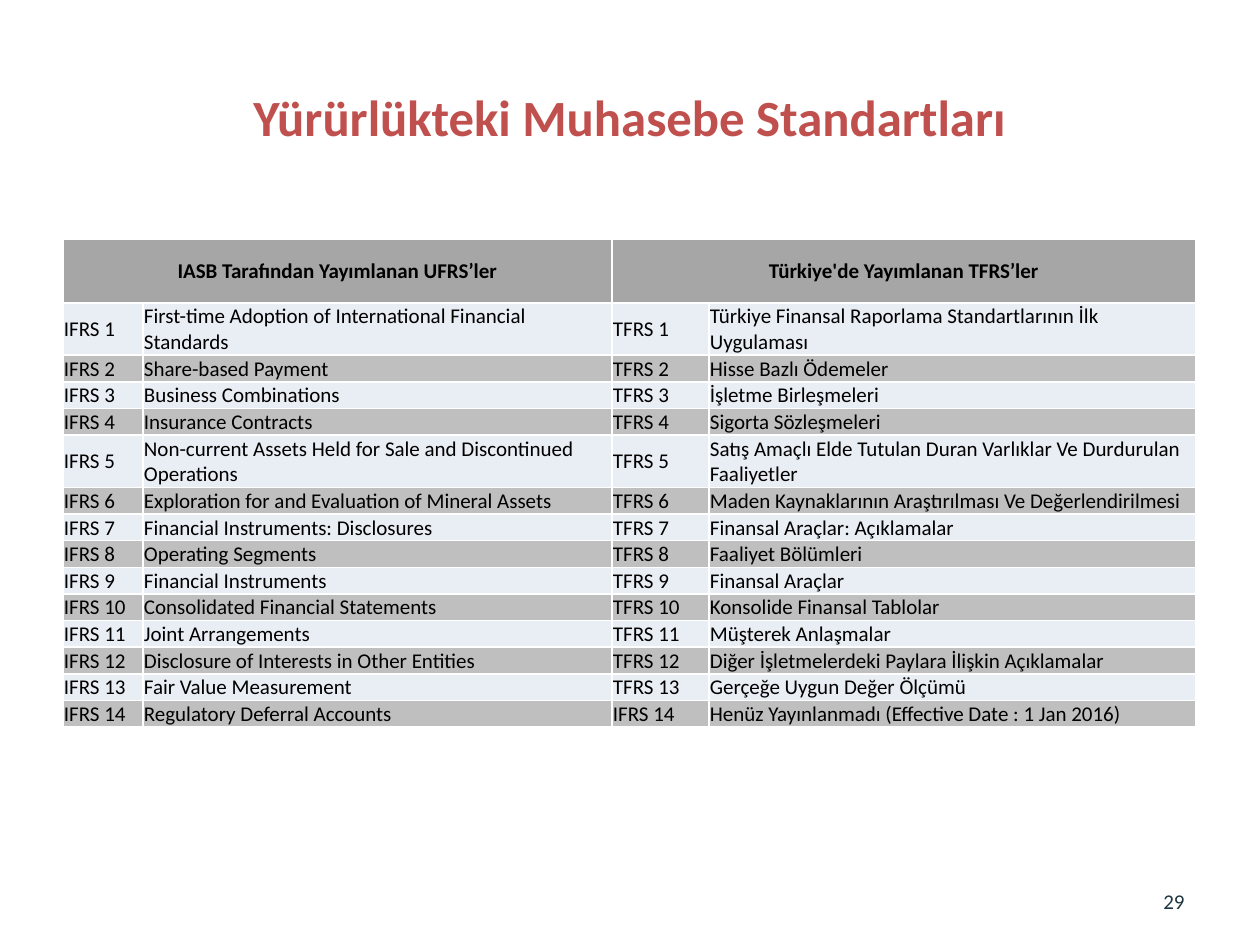
import pptx
import pptx.dml.color
import pptx.enum.text
import pptx.oxml
import pptx.oxml.ns
import pptx.util

PX = 914400 // 126  # EMU per px
ALIGN = pptx.enum.text.PP_ALIGN
MIDDLE = pptx.enum.text.MSO_ANCHOR.MIDDLE

HEADINGS = ["IASB Tarafından Yayımlanan UFRS’ler", "Türkiye'de Yayımlanan TFRS’ler"]
# Names of standards 1 to 14: international, Turkish
STANDARDS = [
    ("First-time Adoption of International Financial Standards",
     "Türkiye Finansal Raporlama Standartlarının İlk Uygulaması"),
    ("Share-based Payment", "Hisse Bazlı Ödemeler"),
    ("Business Combinations", "İşletme Birleşmeleri"),
    ("Insurance Contracts", "Sigorta Sözleşmeleri"),
    ("Non-current Assets Held for Sale and Discontinued Operations",
     "Satış Amaçlı Elde Tutulan Duran Varlıklar Ve Durdurulan  Faaliyetler"),
    ("Exploration for and Evaluation of Mineral Assets",
     "Maden Kaynaklarının Araştırılması Ve Değerlendirilmesi"),
    ("Financial Instruments: Disclosures", "Finansal Araçlar: Açıklamalar"),
    ("Operating Segments", "Faaliyet Bölümleri"),
    ("Financial Instruments", "Finansal Araçlar"),
    ("Consolidated Financial Statements", "Konsolide Finansal Tablolar"),
    ("Joint Arrangements", "Müşterek Anlaşmalar"),
    ("Disclosure of Interests in Other Entities",
     "Diğer İşletmelerdeki Paylara İlişkin Açıklamalar"),
    ("Fair Value Measurement", "Gerçeğe Uygun Değer Ölçümü"),
    ("Regulatory Deferral Accounts", "Henüz Yayınlanmadı (Effective Date : 1 Jan 2016)"),
]
COLUMN_WIDTHS = [80, 469, 97, 487]
HEADER_HEIGHT, ROW_HEIGHT = 64, 18
HEADER_FILL, ROW_FILLS = "A6A6A6", ["E9EDF4", "BFBFBF"]


def px(length):
    return pptx.util.Emu(length * PX)


def color(hex_code):
    return pptx.dml.color.RGBColor.from_string(hex_code)


def write(frame, text, size=12, hex_code="000000", bold=False, align=ALIGN.LEFT):
    frame.word_wrap = True
    paragraph = frame.paragraphs[0]
    paragraph.alignment = align
    run = paragraph.add_run()
    run.text = text
    run.font.name = "Calibri"
    run.font.size = pptx.util.Pt(size)
    run.font.bold = bold
    run.font.color.rgb = color(hex_code)


def style_cell(cell, fill):
    cell.vertical_anchor = MIDDLE
    cell.margin_left = cell.margin_right = cell.margin_top = px(1)
    cell.margin_bottom = 0
    for side in ("lnL", "lnR", "lnT", "lnB"):
        cell.fill._xPr.append(pptx.oxml.parse_xml(
            f'<a:{side} {pptx.oxml.ns.nsdecls("a")} w="12700"><a:solidFill>'
            f'<a:srgbClr val="FFFFFF"/></a:solidFill></a:{side}>'))
    cell.fill.solid()
    cell.fill.fore_color.rgb = color(fill)


def add_title(slide, text):
    title = slide.shapes.title
    title.left, title.top, title.width, title.height = map(px, (63, 38, 1134, 157))
    title.text_frame.vertical_anchor = MIDDLE
    write(title.text_frame, text, size=29, hex_code="C0504D", bold=True, align=ALIGN.CENTER)


def add_page_number(slide, number):
    box = slide.shapes.add_textbox(*map(px, (903, 876, 294, 50)))
    box.text_frame.vertical_anchor = MIDDLE
    write(box.text_frame, number, hex_code="1D3641", align=ALIGN.RIGHT)


def add_standards_table(slide):
    row_count = len(STANDARDS) + 1
    height = HEADER_HEIGHT + ROW_HEIGHT * len(STANDARDS)
    table = slide.shapes.add_table(
        row_count, len(COLUMN_WIDTHS), px(63), px(239),
        px(sum(COLUMN_WIDTHS)), px(height)).table
    table.horz_banding = table.first_row = False
    for column, width in zip(table.columns, COLUMN_WIDTHS):
        column.width = px(width)
    for index, row in enumerate(table.rows):
        row.height = px(ROW_HEIGHT if index else HEADER_HEIGHT)
        for cell in row.cells:
            style_cell(cell, ROW_FILLS[(index - 1) % 2] if index else HEADER_FILL)

    # Headings, each over a code and a name column
    for index, heading in enumerate(HEADINGS):
        first = table.cell(0, 2 * index)
        first.merge(table.cell(0, 2 * index + 1))
        write(first.text_frame, heading, bold=True, align=ALIGN.CENTER)

    # Standards; the last one has no Turkish code yet
    for number, (international, turkish) in enumerate(STANDARDS, start=1):
        code = f"IFRS {number}"
        turkish_code = code if number == len(STANDARDS) else f"TFRS {number}"
        for column, text in enumerate((code, international, turkish_code, turkish)):
            write(table.cell(number, column).text_frame, text)


def main():
    deck = pptx.Presentation()
    deck.slide_width, deck.slide_height = px(1260), px(945)
    slide = deck.slides.add_slide(deck.slide_layouts[5])
    add_title(slide, "Yürürlükteki Muhasebe Standartları")
    add_standards_table(slide)
    add_page_number(slide, "29")
    deck.save("out.pptx")


if __name__ == "__main__":
    main()
